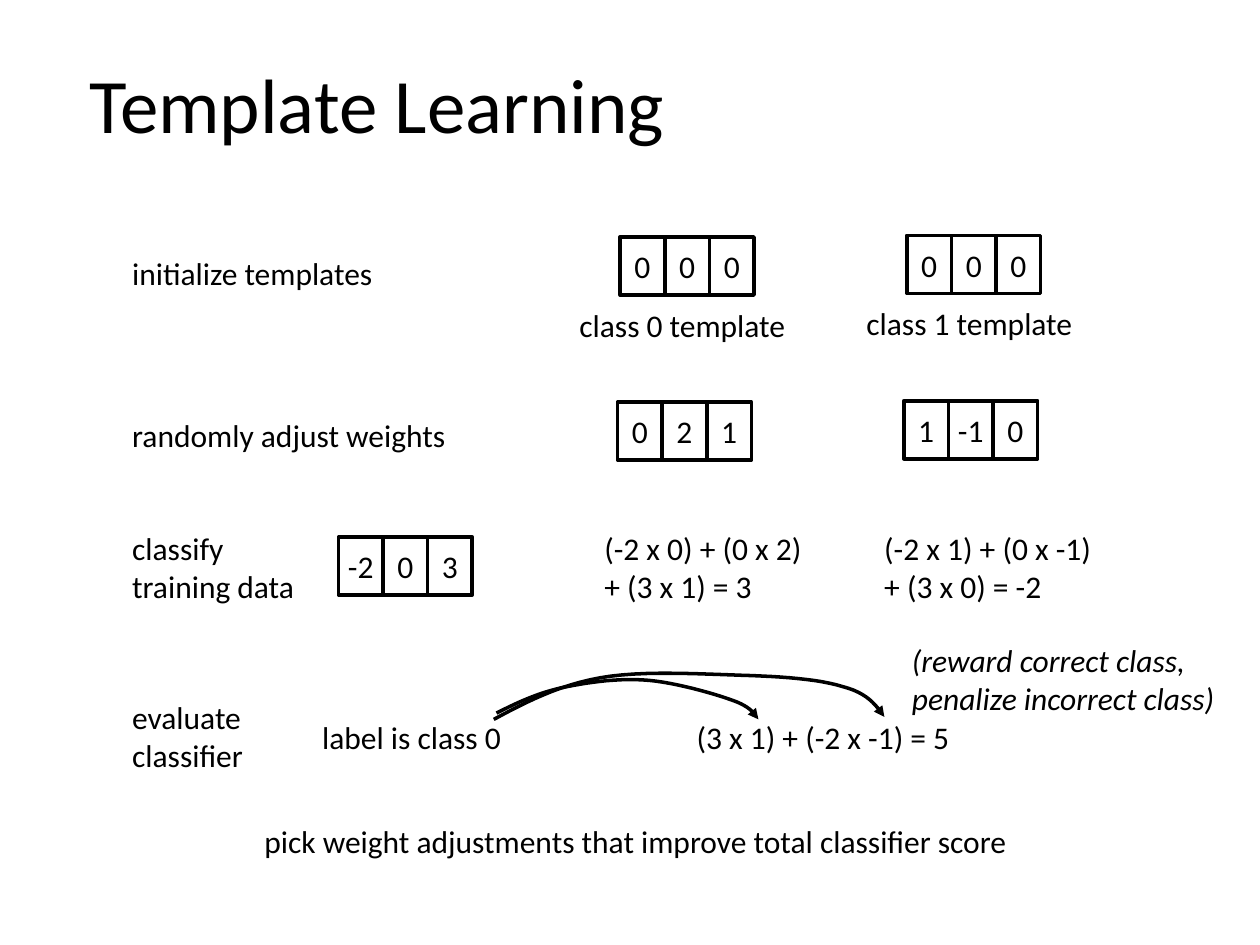
"""Build the Template Learning slide."""
import pptx
import pptx.dml.color
import pptx.enum.shapes
import pptx.enum.text
import pptx.oxml
import pptx.oxml.ns
import pptx.util

Pt = pptx.util.Pt
BLACK = "000000"


def color(value):
    return pptx.dml.color.RGBColor.from_string(value)


def bezier(start, first, second, end, step):
    weights = ((1 - step) ** 3, 3 * step * (1 - step) ** 2, 3 * step ** 2 * (1 - step), step ** 3)
    points = (start, first, second, end)
    return tuple(sum(w * point[axis] for w, point in zip(weights, points)) for axis in (0, 1))


class Sketch:
    font = "Calibri"
    size = 18
    stroke = 2
    cell_width = 25.5
    cell_height = 33.2

    def __init__(self, page):
        self.page = page

    def fill_text(self, frame, text, size, italic=False):
        para = frame.paragraphs[0]
        para.text = text
        para.font.name = self.font
        para.font.size = Pt(size)
        para.font.italic = italic
        para.font.color.rgb = color(BLACK)
        return para

    def outline(self, shape):
        shape.shadow.inherit = False
        shape.fill.background()
        shape.line.color.rgb = color(BLACK)
        shape.line.width = Pt(self.stroke)

    def text(self, text, left, top, width, height=28.8, size=size, italic=False):
        box = self.page.shapes.add_textbox(Pt(left), Pt(top), Pt(width), Pt(height))
        box.text_frame.word_wrap = True
        box.text_frame.auto_size = pptx.enum.text.MSO_AUTO_SIZE.SHAPE_TO_FIT_TEXT
        self.fill_text(box.text_frame, text, size, italic)

    def vector(self, values, left, top):
        for index, value in enumerate(values):
            cell = self.page.shapes.add_shape(
                pptx.enum.shapes.MSO_SHAPE.RECTANGLE, Pt(left + index * self.cell_width), Pt(top),
                Pt(self.cell_width), Pt(self.cell_height))
            self.outline(cell)
            frame = cell.text_frame
            frame.margin_left = frame.margin_right = 0
            frame.word_wrap = False
            frame.vertical_anchor = pptx.enum.text.MSO_ANCHOR.MIDDLE
            para = self.fill_text(frame, str(value), self.size)
            para.alignment = pptx.enum.text.PP_ALIGN.CENTER

    def curved_arrow(self, points, steps=12):
        track = [bezier(*points[index:index + 4], step / steps)
                 for index in range(0, len(points) - 1, 3) for step in range(1, steps + 1)]
        (start_x, start_y), *rest = [(Pt(x), Pt(y)) for x, y in points[:1] + track]
        builder = self.page.shapes.build_freeform(start_x, start_y)
        builder.add_line_segments(rest, close=False)
        curve = builder.convert_to_shape()
        self.outline(curve)
        tail = pptx.oxml.parse_xml(
            f'<a:tailEnd {pptx.oxml.ns.nsdecls("a")} type="triangle"/>')
        curve.element.spPr.find(pptx.oxml.ns.qn("a:ln")).append(tail)


def main():
    deck = pptx.Presentation()
    deck.slide_width, deck.slide_height = Pt(720), Pt(540)
    sketch = Sketch(deck.slides.add_slide(deck.slide_layouts[6]))

    sketch.text("Template Learning", 44, 28.8, 350, 60.5, size=44)

    for label, top, width, height in (
            ("initialize templates", 141.8, 162, 28.8),
            ("randomly adjust weights", 234, 204, 28.8),
            ("classify training data", 298.8, 121.7, 51),
            ("evaluate classifier", 395.3, 121.7, 51)):
        sketch.text(label, 68.4, top, width, height)

    for values, left, top in (
            ((0, 0, 0), 354.4, 135.4), ((0, 0, 0), 518.2, 134.5),
            ((0, 2, 1), 352.9, 229.8), ((1, -1, 0), 516.5, 229),
            ((-2, 0, 3), 193.4, 306.8)):
        sketch.vector(values, left, top)

    sketch.text("class 0 template", 324, 171.3, 136.8)
    sketch.text("class 1 template", 488, 170, 136.8)
    sketch.text("(-2 x 0) + (0 x 2) + (3 x 1) = 3", 338.2, 298.8, 128.2, 51)
    sketch.text("(-2 x 1) + (0 x -1) + (3 x 0) = -2", 498.2, 298.8, 137.5, 51)
    sketch.text("label is class 0", 177, 406.8, 135.4)
    sketch.text("(3 x 1) + (-2 x -1) = 5", 391, 406.8, 188)
    sketch.text("pick weight adjustments that improve total classifier score", 144, 466.3, 463.7)

    sketch.curved_arrow([
        (283.7, 407.5), (296.6, 401), (308.9, 395.3), (324, 392.4),
        (338.4, 389.5), (355, 387.4), (370.8, 388.8),
        (385.9, 390.2), (406.8, 396), (416.9, 399.6),
        (427.7, 403.2), (430.6, 406.8), (433.4, 411.1)])
    sketch.curved_arrow([
        (282.2, 411.1), (301, 401), (319, 391.7), (342.7, 387.4),
        (366.5, 383), (401, 385.2), (424.1, 385.9),
        (447.1, 386.6), (468, 388.1), (481.7, 392.4),
        (495.4, 396), (500.4, 402.5), (505.4, 409.7)])

    sketch.text("(reward correct class, penalize incorrect class)", 514, 362.9, 200.2, 51, italic=True)
    deck.save("out.pptx")


if __name__ == "__main__":
    main()
